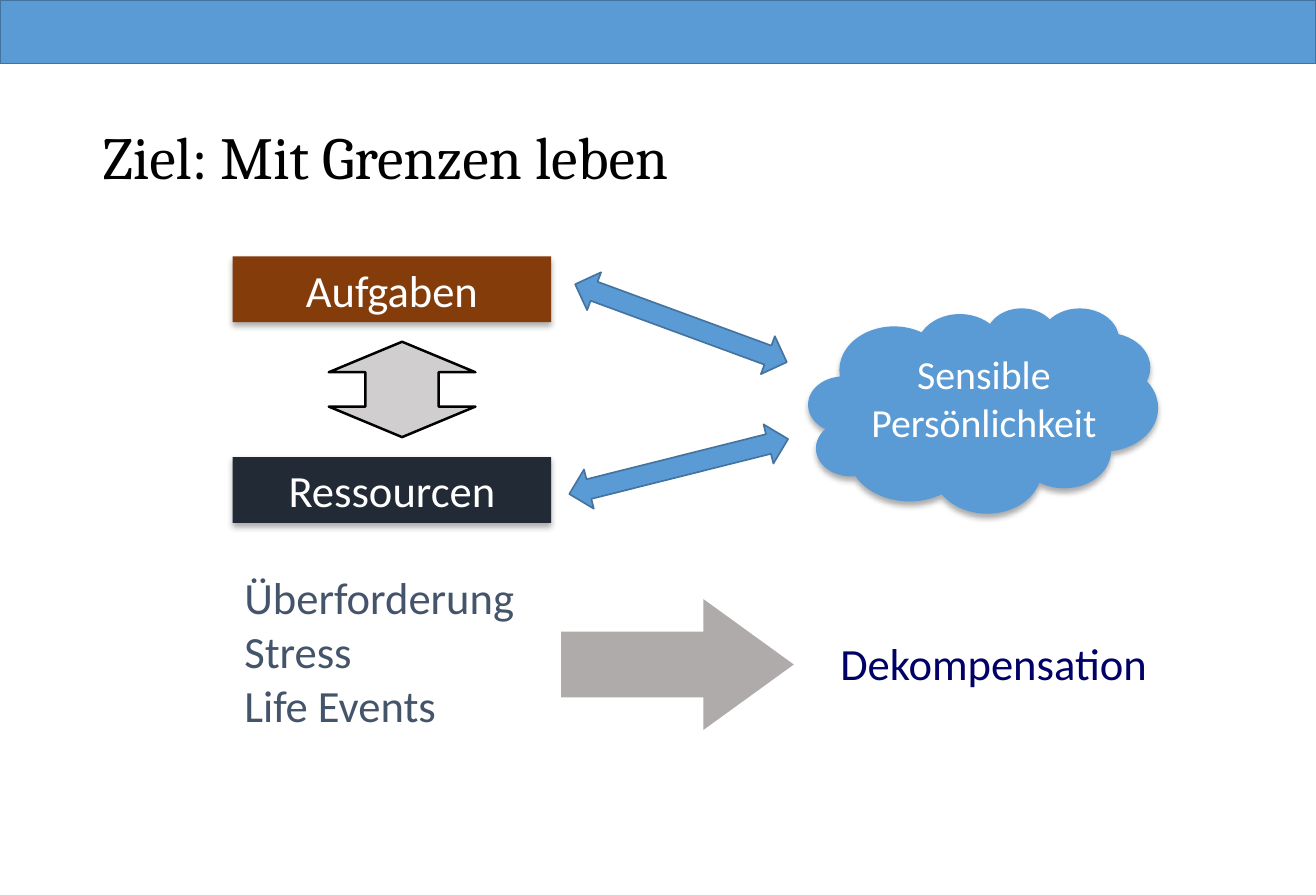
from lxml.etree import SubElement
from pptx import Presentation
from pptx.dml.color import RGBColor
from pptx.enum.shapes import MSO_SHAPE as SHAPE
from pptx.enum.text import MSO_ANCHOR as ANCHOR, MSO_AUTO_SIZE as AUTO, PP_ALIGN as ALIGN
from pptx.oxml.ns import qn
from pptx.util import Cm, Pt

BLUE = RGBColor(0x5B, 0x9B, 0xD5)
BLUE_EDGE = RGBColor(0x43, 0x73, 0x9E)
BROWN = RGBColor(0x84, 0x3C, 0x0B)
DARK = RGBColor(0x22, 0x2A, 0x35)
GREY = RGBColor(0xAF, 0xAB, 0xAB)
LIGHT_GREY = RGBColor(0xD0, 0xCE, 0xCE)
SLATE = RGBColor(0x44, 0x54, 0x6A)
NAVY = RGBColor(0x00, 0x00, 0x66)
WHITE = RGBColor(0xFF, 0xFF, 0xFF)
BLACK = RGBColor(0x00, 0x00, 0x00)


class SlideBuilder:
    body_font = "Calibri"
    title_font = "Cambria"
    body_size = 26.9

    def __init__(self, prs):
        self.slide = prs.slides.add_slide(prs.slide_layouts[5])

    def fill_text(self, tf, lines, color, size=body_size, font=body_font,
                  align=ALIGN.LEFT, anchor=ANCHOR.TOP, spacing=None, before=0):
        tf.word_wrap = True
        tf.auto_size = AUTO.NONE
        tf.vertical_anchor = anchor
        for i, line in enumerate(lines):
            p = tf.add_paragraph() if i else tf.paragraphs[0]
            p.alignment = align
            p.line_spacing = spacing
            p.space_before = Pt(before if i else 0)
            r = p.add_run()
            r.text = line
            r.font.name = font
            r.font.size = Pt(size)
            r.font.color.rgb = color

    def title(self, text, *box):
        sp = self.slide.shapes.title
        sp.left, sp.top, sp.width, sp.height = map(Cm, box)
        self.fill_text(sp.text_frame, [text], BLACK, 36, self.title_font,
                       anchor=ANCHOR.MIDDLE, spacing=0.9)

    def text(self, lines, color, *box, **style):
        sp = self.slide.shapes.add_textbox(*map(Cm, box))
        self.fill_text(sp.text_frame, lines, color, **style)

    def shape(self, kind, fill, *box, line=None, line_width=1, rotation=0, adjust=()):
        sp = self.slide.shapes.add_shape(kind, *map(Cm, box))
        sp.shadow.inherit = False
        sp.rotation = rotation
        for i, value in enumerate(adjust):
            sp.adjustments[i] = value
        sp.fill.solid()
        sp.fill.fore_color.rgb = fill
        if line is None:
            sp.line.fill.background()
        else:
            sp.line.color.rgb = line
            sp.line.width = Pt(line_width)
        return sp

    def shadowed(self, kind, fill, *box):
        sp = self.shape(kind, fill, *box)
        effects = sp._element.spPr.find(qn("a:effectLst"))
        shadow = SubElement(effects, qn("a:outerShdw"), blurRad=str(Pt(3.5)),
                            dist=str(Pt(2.2)), dir="5400000", algn="t", rotWithShape="0")
        color = SubElement(shadow, qn("a:srgbClr"), val="000000")
        SubElement(color, qn("a:alpha"), val="32000")
        return sp

    def label_box(self, text, fill, *box):
        sp = self.shadowed(SHAPE.RECTANGLE, fill, *box)
        self.fill_text(sp.text_frame, [text], WHITE, align=ALIGN.CENTER, anchor=ANCHOR.MIDDLE)


def main():
    prs = Presentation()
    prs.slide_width, prs.slide_height = Cm(28), Cm(19.05)
    s = SlideBuilder(prs)

    s.shape(SHAPE.RECTANGLE, BLUE, 0, 0, 28, 1.35, line=BLUE_EDGE)
    s.title("Ziel: Mit Grenzen leben", 1.93, 2.13, 24.16, 2.57)

    s.shape(SHAPE.RIGHT_ARROW, GREY, 11.94, 12.75, 4.95, 2.79, adjust=(0.5, 0.69))
    s.text(["Dekompensation"], NAVY, 17.63, 13.41, 7.75, 1.4)

    for text, fill, top in (("Aufgaben", BROWN, 5.46), ("Ressourcen", DARK, 9.73)):
        s.label_box(text, fill, 4.95, top, 6.78, 1.4)
    s.shape(SHAPE.LEFT_RIGHT_ARROW, LIGHT_GREY, 7.54, 6.73, 2.03, 3.12,
            line=BLACK, line_width=1.5, rotation=90, adjust=(0.5, 0.32))
    s.text(["Überforderung", "Stress", "Life Events"], SLATE,
           4.95, 12.4, 9.09, 3.45, spacing=0.6, before=13.45)

    for left, top, rotation in ((12.09, 6.45, 20.2), (12.04, 9.5, 345.9)):
        s.shape(SHAPE.LEFT_RIGHT_ARROW, BLUE, left, top, 4.8, 0.86,
                line=BLUE_EDGE, rotation=rotation)
    s.shadowed(SHAPE.CLOUD, BLUE, 17.2, 6.55, 7.44, 4.37)
    s.text(["Sensible", "Persönlichkeit"], WHITE, 15.93, 7.32, 10.01, 2.31,
           size=24, align=ALIGN.CENTER)

    prs.save("out.pptx")


if __name__ == "__main__":
    main()
